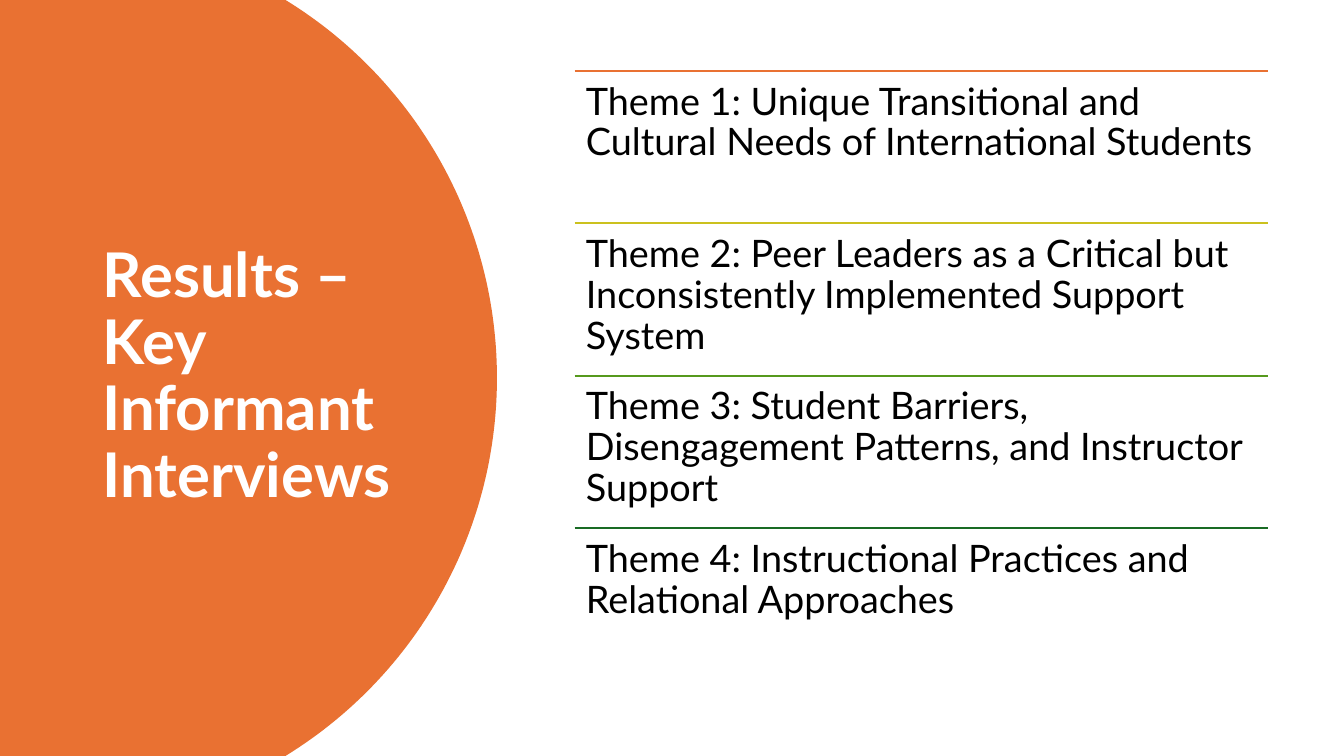
"""Build the slide of key informant interview themes."""
from dataclasses import dataclass
from math import asin, cos, sin

from lxml.etree import SubElement
from pptx import Presentation
from pptx.dml.color import RGBColor
from pptx.enum.shapes import MSO_CONNECTOR
from pptx.enum.text import MSO_ANCHOR, MSO_AUTO_SIZE, PP_ALIGN
from pptx.oxml.ns import qn
from pptx.slide import Slide
from pptx.text.text import TextFrame
from pptx.util import Pt

ORANGE = RGBColor(0xE9, 0x71, 0x32)
LIME = RGBColor(0xCB, 0xC1, 0x1E)
GREEN = RGBColor(0x56, 0x99, 0x1D)
FOREST = RGBColor(0x19, 0x6B, 0x24)
WHITE = RGBColor(0xFF, 0xFF, 0xFF)
BLACK = RGBColor(0x00, 0x00, 0x00)

FONT = "Lato"
WIDTH, HEIGHT = 960, 540
RADIUS, CENTER = 316.8, 38.2
STEPS = 120
LEFT, TOP, SPAN, PITCH = 410.4, 50.7, 495.4, 108.9
INSET = 8.1


@dataclass
class Theme:
    text: str
    color: RGBColor


THEMES = [
    Theme("Theme 1: Unique Transitional and Cultural Needs of International Students", ORANGE),
    Theme("Theme 2: Peer Leaders as a Critical but Inconsistently Implemented Support System", LIME),
    Theme("Theme 3: Student Barriers, Disengagement Patterns, and Instructor Support", GREEN),
    Theme("Theme 4: Instructional Practices and Relational Approaches", FOREST),
]


def write(frame: TextFrame, text: str, size: float, color: RGBColor, bold: bool) -> None:
    frame.text = text
    frame.word_wrap = True
    frame.auto_size = MSO_AUTO_SIZE.NONE
    line = frame.paragraphs[0]
    line.alignment = PP_ALIGN.LEFT
    line.line_spacing = 0.9
    font = line.runs[0].font
    font.name, font.size, font.bold = FONT, Pt(size), bold
    font.color.rgb = color


def draw_disc(slide: Slide) -> None:
    half = asin(HEIGHT / 2 / RADIUS)
    turns = [half * (2 * step / STEPS - 1) for step in range(STEPS + 1)]
    arc = [
        (Pt(CENTER + RADIUS * cos(turn)), Pt(HEIGHT / 2 + RADIUS * sin(turn)))
        for turn in turns
    ]
    pen = slide.shapes.build_freeform(0, 0)
    pen.add_line_segments(arc + [(0, Pt(HEIGHT))], close=True)
    disc = pen.convert_to_shape()
    disc.shadow.inherit = False
    disc.fill.solid()
    disc.fill.fore_color.rgb = ORANGE
    disc.line.fill.background()


def draw_title(slide: Slide) -> None:
    title = slide.shapes.title
    title.left, title.top = Pt(66.2), Pt(50.4)
    title.width, title.height = Pt(232.6), Pt(438.5)
    frame = title.text_frame
    write(frame, "Results – Key Informant Interviews", 44, WHITE, True)
    frame.vertical_anchor = MSO_ANCHOR.MIDDLE


def draw_theme(slide: Slide, theme: Theme, top: float) -> None:
    rule = slide.shapes.add_connector(
        MSO_CONNECTOR.STRAIGHT, Pt(LEFT), Pt(top), Pt(LEFT + SPAN), Pt(top)
    )
    rule.line.color.rgb = theme.color
    rule.line.width = Pt(1.5)
    SubElement(rule._element.spPr, qn("a:effectLst"))
    box = slide.shapes.add_textbox(Pt(LEFT), Pt(top), Pt(SPAN), Pt(PITCH))
    frame = box.text_frame
    frame.margin_left = frame.margin_right = Pt(INSET)
    frame.margin_top = frame.margin_bottom = Pt(INSET)
    write(frame, theme.text, 27, BLACK, False)


def main() -> None:
    deck = Presentation()
    deck.slide_width, deck.slide_height = Pt(WIDTH), Pt(HEIGHT)
    slide = deck.slides.add_slide(deck.slide_layouts[5])
    draw_disc(slide)
    tree = slide.shapes._spTree
    tree.append(slide.shapes.title._element)
    draw_title(slide)
    for row, theme in enumerate(THEMES):
        draw_theme(slide, theme, TOP + row * PITCH)
    deck.save("out.pptx")


if __name__ == "__main__":
    main()
